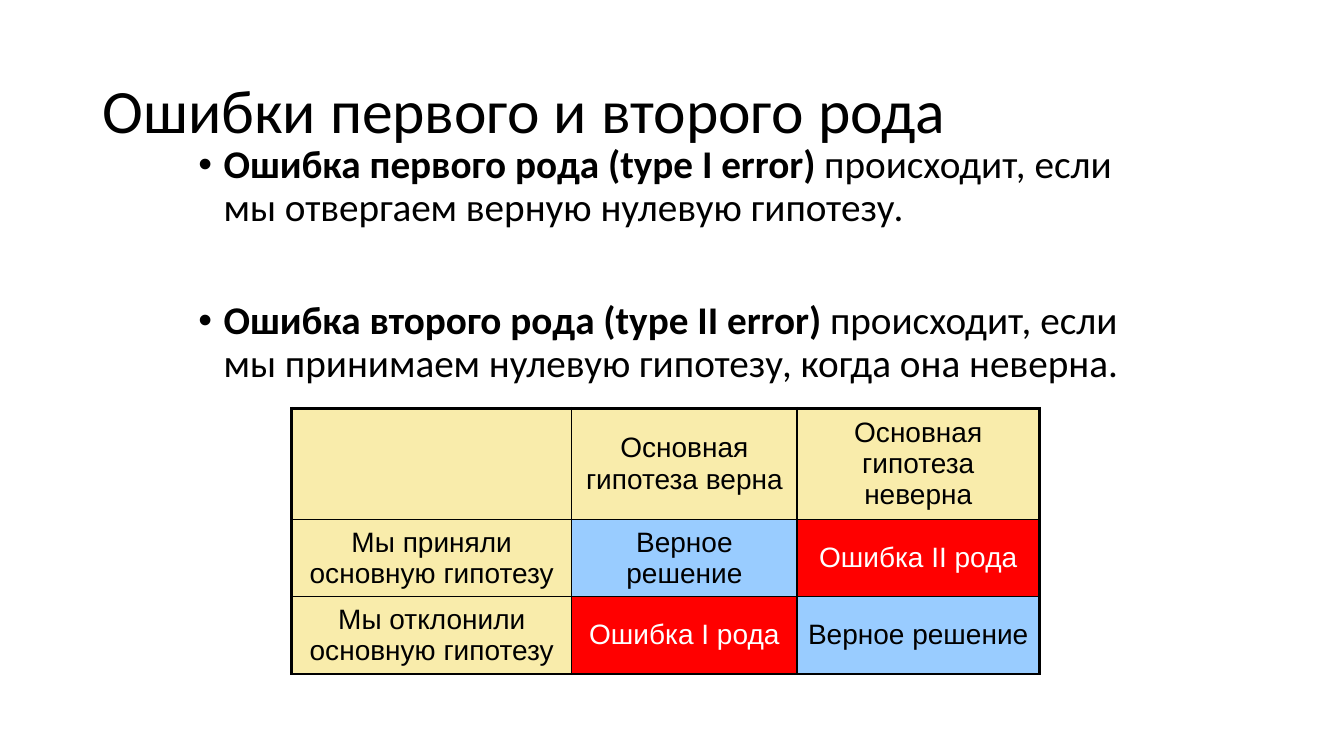
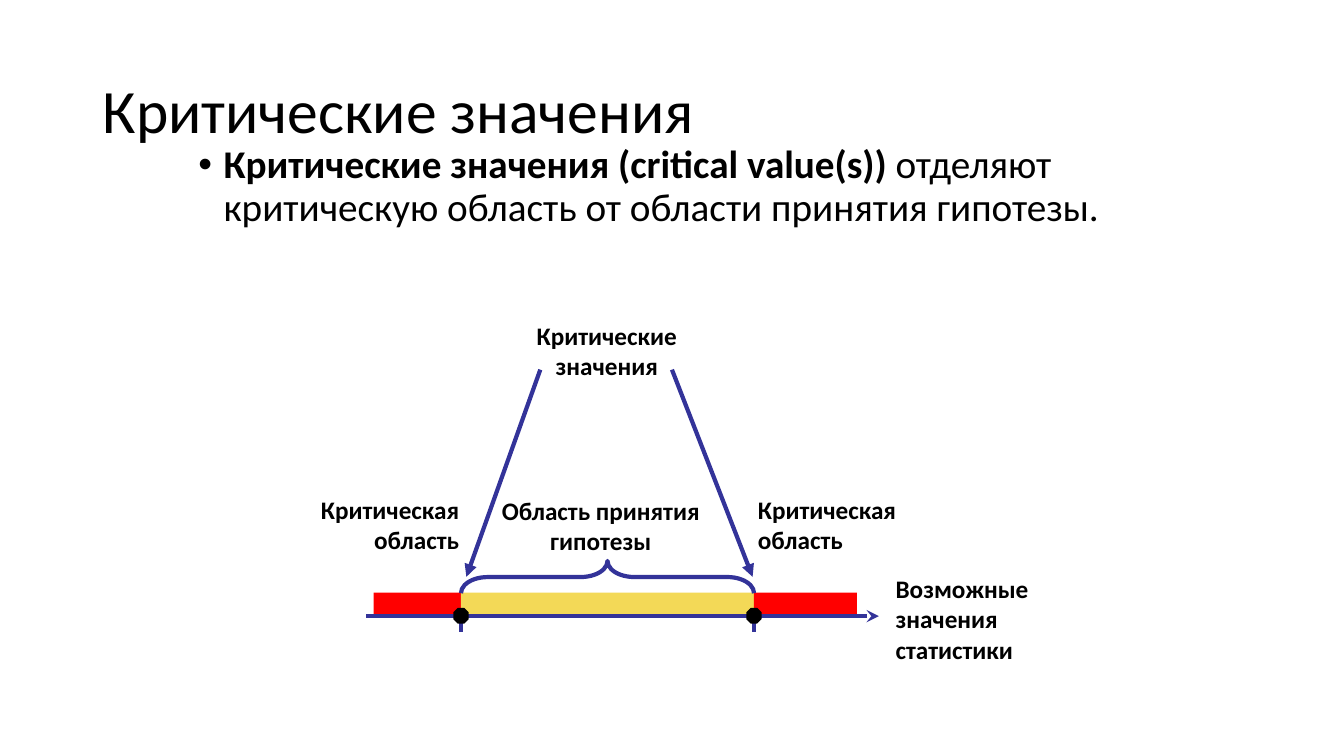
from itertools import cycle
from lxml import etree
from pptx import Presentation
from pptx import util as u
from pptx.dml.color import RGBColor as Rgb
from pptx.enum import shapes, text
from pptx.oxml import ns


class Theme:
    ink = Rgb.from_string("000000")
    white = Rgb.from_string("FFFFFF")
    cream = Rgb.from_string("F9ECAB")
    sky = Rgb.from_string("99CCFF")
    red = Rgb.from_string("FF0000")
    gold = Rgb.from_string("F3D957")
    navy = Rgb.from_string("333399")
    title = {"name": "Calibri", "size": u.Pt(44)}
    body = {"name": "Calibri", "size": u.Pt(28)}
    label = {"name": "Calibri", "size": u.Pt(18), "bold": True}
    cell = {"name": "Arial", "size": u.Pt(20)}
    thick, thin, stroke = u.Pt(2.25), u.Pt(1), u.Pt(3)


align = text.PP_ALIGN
kind = shapes.MSO_SHAPE
deck = Presentation()
deck.slide_width, deck.slide_height = u.Inches(13.333), u.Inches(7.5)
col, row = deck.slide_width / 100, deck.slide_height / 100


def grid(*spots):
    return [round(n * unit) for n, unit in zip(spots, cycle((col, row)))]


def write(frame, lines, font, ink=Theme.ink, bullet=False, **form):
    frame.word_wrap = True
    for i, parts in enumerate(lines):
        para = frame.paragraphs[0] if i == 0 else frame.add_paragraph()
        if bullet:
            props = para._p.get_or_add_pPr()
            props.set("marL", str(u.Inches(0.25)))
            props.set("indent", str(-u.Inches(0.25)))
            etree.SubElement(props, ns.qn("a:buFont"), typeface="Arial")
            etree.SubElement(props, ns.qn("a:buChar"), char="•")
        for key, val in form.items():
            if key != "space_before" or i > 0:
                setattr(para, key, val)
        for j, part in enumerate(parts):
            run = para.add_run()
            run.text = part
            for key, val in font.items():
                setattr(run.font, key, val)
            run.font.color.rgb = ink
            if bullet:
                run.font.bold = j == 0


pages = [
    ("Ошибки первого и второго рода", [
        ("Ошибка первого рода (type I error)",
         " происходит, если мы отвергаем верную нулевую гипотезу."),
        ("Ошибка второго рода (type II error) ",
         "происходит, если мы принимаем нулевую гипотезу, когда она неверна.")]),
    ("Критические значения", [
        ("Критические значения (critical value(s)) ",
         "отделяют критическую область от области принятия гипотезы.")]),
]
for head, points in pages:
    slide = deck.slides.add_slide(deck.slide_layouts[6])
    title = slide.shapes.add_textbox(*grid(6.9, 5.33, 86.25, 19.33)).text_frame
    title.vertical_anchor = text.MSO_ANCHOR.MIDDLE
    write(title, [[head]], Theme.title, line_spacing=0.9)
    body = slide.shapes.add_textbox(*grid(14.02, 18.53, 72, 36.8)).text_frame
    write(body, points, Theme.body, bullet=True, line_spacing=0.9, space_before=u.Pt(51))

errors, values = deck.slides

cells = [
    ["", "Основная гипотеза верна", "Основная гипотеза неверна"],
    ["Мы приняли основную гипотезу", "Верное решение", "Ошибка II рода"],
    ["Мы отклонили основную гипотезу", "Ошибка I рода", "Верное решение"],
]
wide, high = [20.85, 16.75, 18.05], [13.9, 9.6, 9.6]
table = errors.shapes.add_table(3, 3, *grid(21.7, 54, sum(wide), sum(high))).table
table.first_row = table.horz_banding = False
for i in range(3):
    table.columns[i].width = round(wide[i] * col)
    table.rows[i].height = round(high[i] * row)
for r, words in enumerate(cells):
    for c, word in enumerate(words):
        cell = table.cell(r, c)
        wrong = word.startswith("Ошибка")
        shade = Theme.cream if 0 in (r, c) else Theme.red if wrong else Theme.sky
        cell.fill.solid()
        cell.fill.fore_color.rgb = shade
        cell.vertical_anchor = text.MSO_ANCHOR.MIDDLE
        if word:
            write(cell.text_frame, [[word]], Theme.cell,
                  Theme.white if wrong else Theme.ink, alignment=align.CENTER)
        edges = {"L": c == 0, "R": c == 2, "T": r == 0, "B": r == 2}
        for n, (side, outer) in enumerate(edges.items()):
            line = etree.Element(ns.qn("a:ln" + side), w=str(Theme.thick if outer else Theme.thin))
            fill = etree.SubElement(line, ns.qn("a:solidFill"))
            etree.SubElement(fill, ns.qn("a:srgbClr"), val=str(Theme.ink))
            cell._tc.get_or_add_tcPr().insert(n, line)

start, low, top, end = 27.8, 34.3, 56.1, 63.75
base, tick = 81.5, 80.4
dot = 1.13
forms = [
    (kind.RECTANGLE, grid(left, 78.4, right - left, 3.2), shade)
    for left, right, shade in [(start, low, Theme.red), (low, top, Theme.gold), (top, end, Theme.red)]
] + [
    (kind.OCTAGON, grid(x - dot / 2, tick, dot, 2.1), Theme.ink) for x in (low, top)
]
lines = [
    ((27.25, base, 65.4, base), "stealth"),
    ((low, tick, low, 83.6), None),
    ((top, tick, top, 83.6), None),
    ((40.2, 48.9, 34.7, 76.3), "triangle"),
    ((50, 48.9, 56, 76.3), "triangle"),
]
labels = [
    ((36.3, 64.8, 16.8, 9.4), ["Область принятия", "гипотезы"], align.CENTER),
    ((55.65, 64.7, 14.1, 9.4), ["Критическая область"], align.LEFT),
    ((20.8, 64.7, 14.1, 9.4), ["Критическая область"], align.RIGHT),
    ((65.9, 75.2, 14.1, 13.3), ["Возможные значения статистики"], align.LEFT),
    ((38.1, 41.7, 14.1, 9.4), ["Критические значения"], align.CENTER),
]


for n, (form, box, shade) in enumerate(forms):
    if n == 3:
        for ends, arrow in lines:
            link = values.shapes.add_connector(shapes.MSO_CONNECTOR.STRAIGHT, *grid(*ends))
            link.line.color.rgb, link.line.width = Theme.navy, Theme.stroke
            if arrow:
                etree.SubElement(link.line._get_or_add_ln(), ns.qn("a:tailEnd"), type=arrow)
            etree.SubElement(link._element.spPr, ns.qn("a:effectLst"))
    shape = values.shapes.add_shape(form, *box)
    shape.shadow.inherit = False
    shape.fill.solid()
    shape.fill.fore_color.rgb = shade
    shape.line.fill.background()

depth, span = round(4.27 * row), round((top - low) * col)
mid = (low + top) / 2 * col
brace = values.shapes.add_shape(kind.LEFT_BRACE, round(mid - depth / 2),
                                round(76.33 * row - span / 2), depth, span)
brace.rotation = 90
brace.adjustments[0], brace.adjustments[1] = 0.83, 0.5
brace.shadow.inherit = False
brace.fill.background()
brace.line.color.rgb, brace.line.width = Theme.navy, Theme.stroke

for box, words, side in labels:
    frame = values.shapes.add_textbox(*grid(*box)).text_frame
    write(frame, [[word] for word in words], Theme.label, alignment=side)

deck.save("out.pptx")
